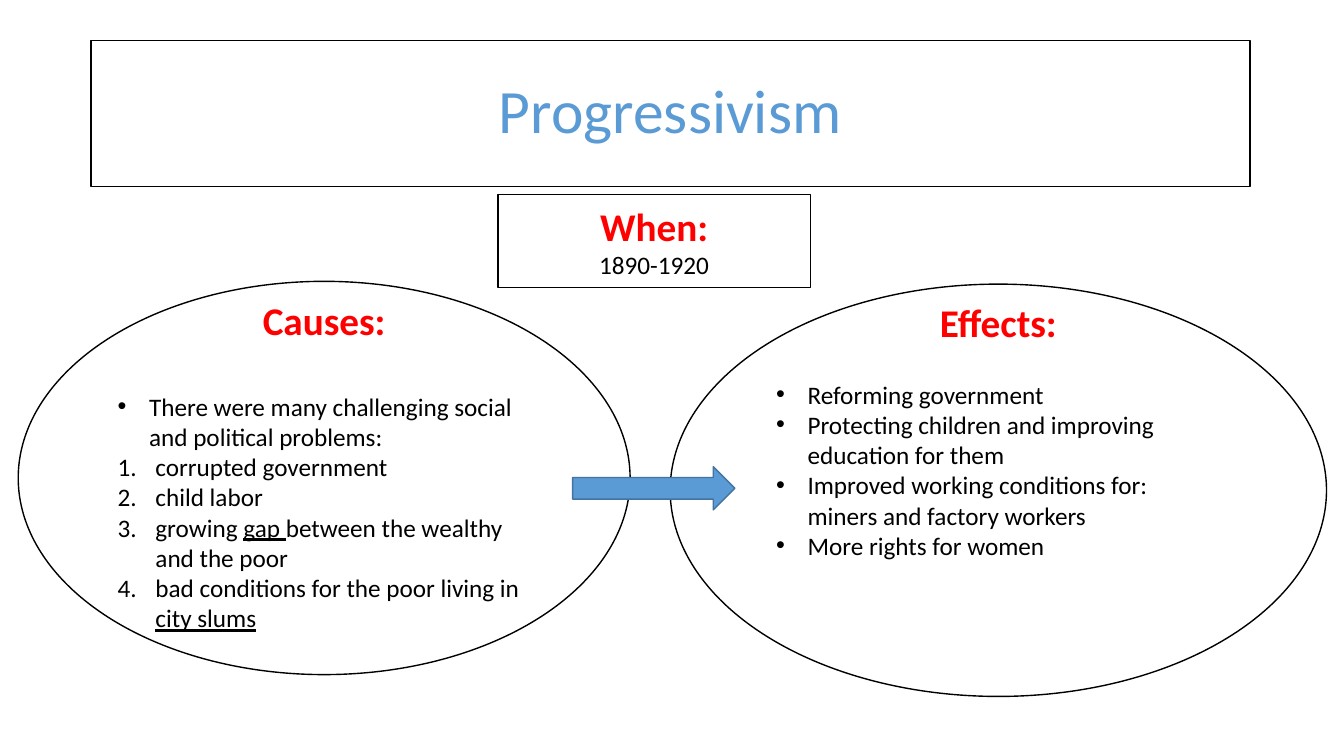
from dataclasses import dataclass

from lxml import etree
from pptx import Presentation
from pptx.dml.color import RGBColor
from pptx.enum.shapes import MSO_SHAPE
from pptx.enum.text import MSO_ANCHOR, PP_ALIGN
from pptx.oxml.ns import qn
from pptx.shapes.autoshape import Shape
from pptx.slide import Slide
from pptx.util import Cm, Pt

ELLIPSE = MSO_SHAPE.OVAL
PROCESS = MSO_SHAPE.FLOWCHART_PROCESS
RIGHT_ARROW = MSO_SHAPE.RIGHT_ARROW
MIDDLE = MSO_ANCHOR.MIDDLE
CENTER = PP_ALIGN.CENTER
LEFT = PP_ALIGN.LEFT

FONT = "Calibri"
WHITE, BLACK, RED = "FFFFFF", "000000", "FF0000"
BLUE, DARK_BLUE = "5B9BD5", "43739E"
BULLET_INDENT, NUMBER_INDENT = 0.79, 0.95
TITLE_ONLY = 5


@dataclass(frozen=True)
class Box:
    left: float
    top: float
    width: float
    height: float


@dataclass(frozen=True)
class Line:
    text: str
    marker: str = ""
    underlined: str = ""


@dataclass(frozen=True)
class Panel:
    geometry: MSO_SHAPE
    box: Box
    heading: str
    lines: tuple[Line, ...]
    heading_gap: float = 0
    bottom_margin: float = 0.13


TITLE_BOX = Box(2.29, 1.02, 29.21, 3.68)
ARROW_BOX = Box(14.43, 11.76, 4.09, 1.09)

PANELS = (
    Panel(ELLIPSE, Box(16.89, 7.16, 16.54, 10.39), "Effects:", (
        Line("Reforming government", "bullet"),
        Line("Protecting children and improving education for them", "bullet"),
        Line("Improved working conditions for: miners and factory workers", "bullet"),
        Line("More rights for women", "bullet"),
    ), heading_gap=24, bottom_margin=3.2),
    Panel(ELLIPSE, Box(0.46, 7.09, 15.42, 9.91), "Causes:", (
        Line("There were many challenging social and political problems:", "bullet"),
        Line("corrupted government", "number"),
        Line("child labor", "number"),
        Line("growing gap between the wealthy and the poor", "number", "gap "),
        Line("bad conditions for the poor living in city slums", "number", "city slums"),
    ), heading_gap=34, bottom_margin=0.8),
    Panel(PROCESS, Box(12.55, 4.9, 7.87, 2.34), "When:", (Line("1890-1920"),)),
)


def color(value: str) -> RGBColor:
    return RGBColor.from_string(value)


def paint(shape: Shape, fill: str, outline: str) -> None:
    shape.fill.solid()
    shape.fill.fore_color.rgb = color(fill)
    shape.line.color.rgb = color(outline)
    shape.line.width = Pt(1)
    shape.shadow.inherit = False


def format_runs(paragraph, size: float, ink: str, bold: bool = False) -> None:
    for run in paragraph.runs:
        run.font.name = FONT
        run.font.size = Pt(size)
        run.font.bold = bold
        run.font.color.rgb = color(ink)


def add_marker(paragraph, marker: str) -> None:
    """Give the paragraph a hanging bullet or automatic number."""
    indent = Cm(BULLET_INDENT if marker == "bullet" else NUMBER_INDENT)
    properties = paragraph._p.get_or_add_pPr()
    properties.set("marL", str(indent))
    properties.set("indent", str(-indent))
    if marker == "bullet":
        etree.SubElement(properties, qn("a:buFont"), typeface="Arial")
        etree.SubElement(properties, qn("a:buChar"), char="•")
    else:
        etree.SubElement(properties, qn("a:buFont"), typeface="+mj-lt")
        etree.SubElement(properties, qn("a:buAutoNum"), type="arabicPeriod")


def write_line(paragraph, line: Line) -> None:
    if line.underlined:
        before, phrase, after = line.text.partition(line.underlined)
        for part in filter(None, (before, phrase, after)):
            run = paragraph.add_run()
            run.text = part
            run.font.underline = part == phrase
    else:
        paragraph.text = line.text
    paragraph.alignment = LEFT if line.marker else CENTER
    if line.marker:
        add_marker(paragraph, line.marker)
    format_runs(paragraph, 18, BLACK)


def add_shape(slide: Slide, geometry: MSO_SHAPE, box: Box, fill: str, outline: str) -> Shape:
    shape = slide.shapes.add_shape(
        geometry, Cm(box.left), Cm(box.top), Cm(box.width), Cm(box.height))
    paint(shape, fill, outline)
    return shape


def add_panel(slide: Slide, panel: Panel) -> None:
    shape = add_shape(slide, panel.geometry, panel.box, WHITE, BLACK)
    text_frame = shape.text_frame
    text_frame.word_wrap = True
    text_frame.vertical_anchor = MIDDLE
    text_frame.margin_bottom = Cm(panel.bottom_margin)
    text_frame.text = panel.heading
    heading = text_frame.paragraphs[0]
    heading.alignment = CENTER
    heading.space_after = Pt(panel.heading_gap)
    format_runs(heading, 28, RED, bold=True)
    for line in panel.lines:
        write_line(text_frame.add_paragraph(), line)


def format_title(slide: Slide) -> None:
    title = slide.shapes.title
    title.left, title.top = Cm(TITLE_BOX.left), Cm(TITLE_BOX.top)
    title.width, title.height = Cm(TITLE_BOX.width), Cm(TITLE_BOX.height)
    title.fill.solid()
    title.fill.fore_color.rgb = color(WHITE)
    title.line.color.rgb = color(BLACK)
    title.line.width = Pt(1)
    title.text_frame.text = "Progressivism"
    title.text_frame.vertical_anchor = MIDDLE
    paragraph = title.text_frame.paragraphs[0]
    paragraph.alignment = CENTER
    paragraph.line_spacing = 0.9
    format_runs(paragraph, 44, BLUE)


def main() -> None:
    presentation = Presentation()
    presentation.slide_width, presentation.slide_height = Cm(33.87), Cm(19.05)
    slide = presentation.slides.add_slide(presentation.slide_layouts[TITLE_ONLY])
    format_title(slide)
    for panel in PANELS:
        add_panel(slide, panel)
    add_shape(slide, RIGHT_ARROW, ARROW_BOX, BLUE, DARK_BLUE)
    presentation.save("out.pptx")


if __name__ == "__main__":
    main()
